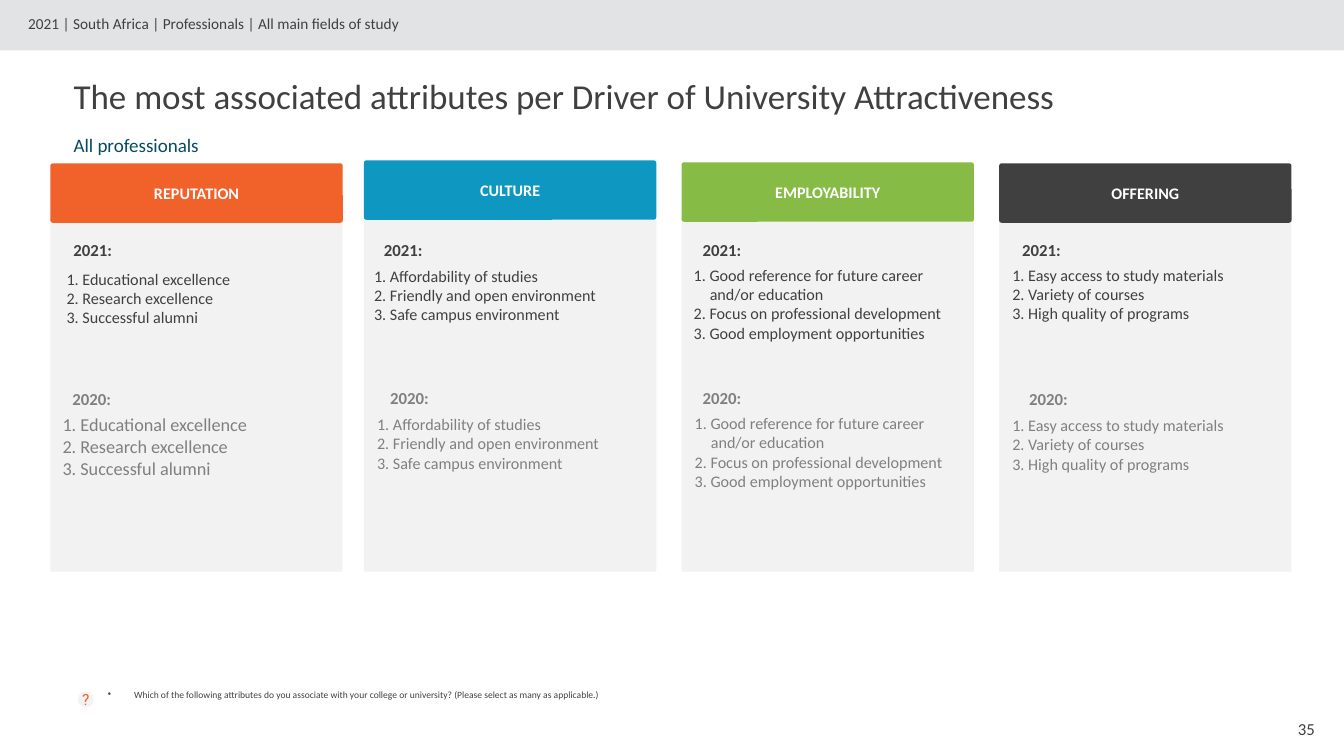
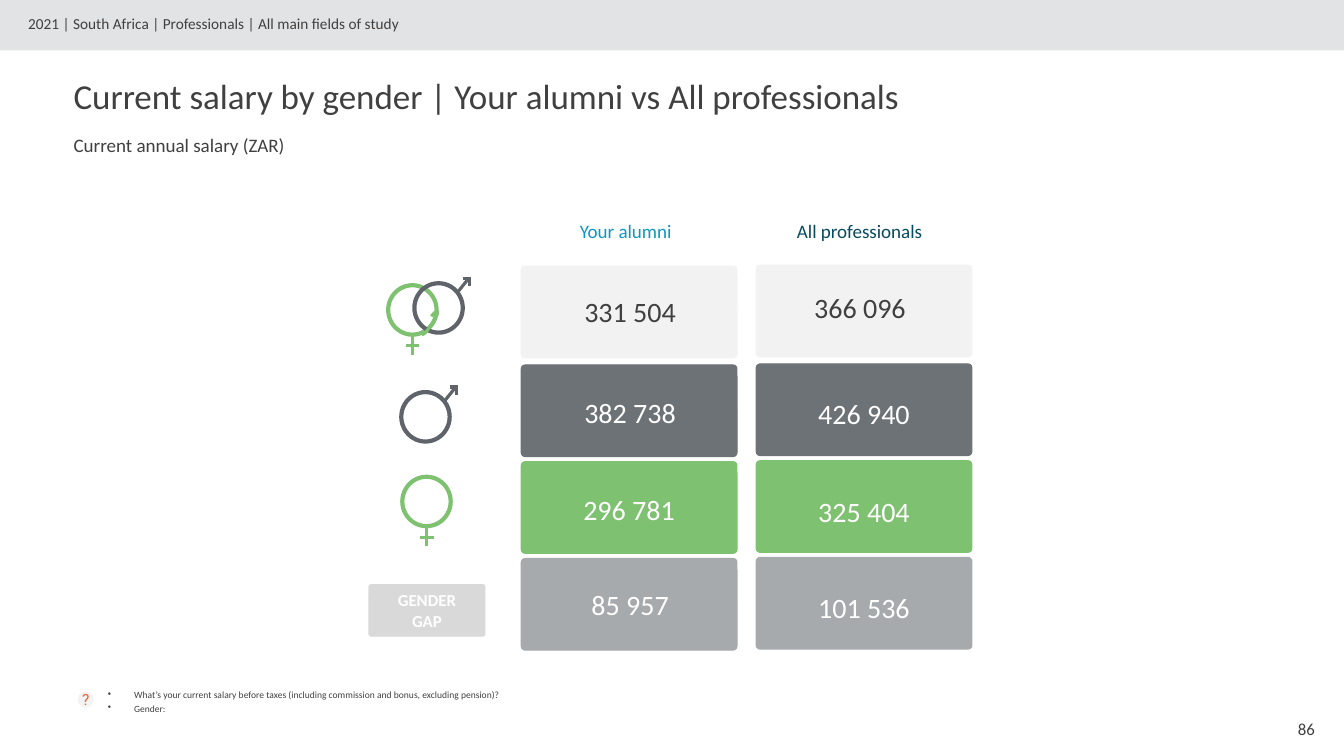
"""Build two survey slides: attributes per driver and salary by gender."""
from dataclasses import dataclass

from lxml import etree
from pptx import Presentation
from pptx.dml.color import RGBColor
from pptx.enum.shapes import MSO_CONNECTOR, MSO_SHAPE
from pptx.enum.text import MSO_ANCHOR, PP_ALIGN
from pptx.oxml.ns import qn
from pptx.util import Inches, Pt

STRAIGHT = MSO_CONNECTOR.STRAIGHT
RECTANGLE, ROUNDED = MSO_SHAPE.RECTANGLE, MSO_SHAPE.ROUNDED_RECTANGLE
CIRCLE, ARC = MSO_SHAPE.FLOWCHART_CONNECTOR, MSO_SHAPE.ARC
TOP, MIDDLE, BOTTOM = MSO_ANCHOR.TOP, MSO_ANCHOR.MIDDLE, MSO_ANCHOR.BOTTOM
LEFT, CENTER, RIGHT = PP_ALIGN.LEFT, PP_ALIGN.CENTER, PP_ALIGN.RIGHT

TITLE_ONLY = 5
FONT, ICON_FONT = "Calibri", "Roboto"
COLORS = {
    "white": "FFFFFF", "text": "414041", "muted": "808080", "band": "E2E3E4",
    "panel": "F2F2F2", "icon": "F3F3F3", "orange": "F1612A", "blue": "0E97C1",
    "lime": "86BC45", "teal": "074B60", "slate": "6D7276", "green": "7EC170",
    "gray": "A7AAAD", "label": "D9D9D9", "male": "5F636A",
}
BREADCRUMB = "2021 | South Africa | Professionals | All main fields of study"
BODY_INSETS = (0.11, 0.05)
CORNER = 0.043

MALE_LINES = [((0.48, -0.05), (0.56, -0.05)), ((0.55, -0.06), (0.55, 0.03)),
              ((0.54, -0.05), (0.42, 0.1))]
FEMALE_LINES = [((0.24, 0.49), (0.24, 0.69)), ((0.18, 0.6), (0.31, 0.6))]


@dataclass
class YearBlock:
    """Place and style of one year's ranking."""
    year: str
    color: str
    year_at: tuple
    list_at: tuple
    size: float = 11.5


@dataclass
class Driver:
    """One column of the driver slide."""
    name: str
    color: str
    left: float
    top: float
    attributes: list
    blocks: list


DRIVERS = [
    Driver("REPUTATION", "orange", 0.5, 1.62,
           ["Educational excellence", "Research excellence", "Successful alumni"],
           [YearBlock("2021:", "text", (0.63, 2.33), (0.66, 2.67)),
            YearBlock("2020:", "muted", (0.62, 3.81), (0.62, 4.1), 13)]),
    Driver("CULTURE", "blue", 3.61, 1.59,
           ["Affordability of studies", "Friendly and open environment",
            "Safe campus environment"],
           [YearBlock("2021:", "text", (3.71, 2.33), (3.71, 2.64)),
            YearBlock("2020:", "muted", (3.77, 3.8), (3.74, 4.11))]),
    Driver("EMPLOYABILITY", "lime", 6.76, 1.61,
           ["Good reference for future career and/or education",
            "Focus on professional development", "Good employment opportunities"],
           [YearBlock("2021:", "text", (6.87, 2.33), (6.88, 2.63)),
            YearBlock("2020:", "muted", (6.87, 3.8), (6.89, 4.1))]),
    Driver("OFFERING", "text", 9.91, 1.62,
           ["Easy access to study materials", "Variety of courses",
            "High quality of programs"],
           [YearBlock("2021:", "text", (10.04, 2.33), (10.04, 2.63)),
            YearBlock("2020:", "muted", (10.11, 3.81), (10.04, 4.12))]),
]

SALARY_ROWS = [("panel", "text"), ("slate", "white"), ("green", "white"), ("gray", "white")]
ROW_TOPS = [2.63, 3.61, 4.57, 5.53]
SALARY_COLUMNS = [
    ("Your alumni", "blue", 5.17, 0.01, 5.4,
     [("331 504", 5.23, 2.87), ("382 738", 5.23, 3.87),
      ("296 781", 5.22, 4.83), ("85 957", 5.23, 5.78)]),
    ("All professionals", "teal", 7.5, 0, 7.72,
     [("366 096", 7.46, 2.83), ("426 940", 7.5, 3.88),
      ("325 404", 7.5, 4.85), ("101 536", 7.5, 5.8)]),
]


def rgb(name):
    """Return the named colour."""
    return RGBColor.from_string(COLORS[name])


def write(shape, lines, size, color, align=LEFT, anchor=TOP, bold=False,
          font=FONT, insets=(0.1, 0.05), hanging=0, bullet=None, gap=0):
    """Fill a shape with equally styled paragraphs."""
    frame = shape.text_frame
    frame.word_wrap = True
    frame.vertical_anchor = anchor
    frame.margin_left = frame.margin_right = Inches(insets[0])
    frame.margin_top = frame.margin_bottom = Inches(insets[1])
    for index, line in enumerate(lines):
        para = frame.add_paragraph() if index else frame.paragraphs[0]
        para.text = line
        para.alignment = align
        if index and gap:
            para.space_before = Pt(gap)
        properties = para._p.get_or_add_pPr()
        if hanging:
            properties.set("marL", str(Inches(hanging)))
            properties.set("indent", str(-Inches(hanging)))
        if bullet:
            etree.SubElement(properties, qn("a:buChar")).set("char", bullet)
        para.font.name = font
        para.font.size = Pt(size)
        para.font.bold = bold
        para.font.color.rgb = rgb(color)


def add_text(slide, at, lines, size, color, **style):
    """Add a text box."""
    box = slide.shapes.add_textbox(*map(Inches, at))
    write(box, lines, size, color, **style)


def add_shape(slide, kind, at, fill=None, line=None, width=0.75):
    """Add a flat preset shape."""
    shape = slide.shapes.add_shape(kind, *map(Inches, at))
    shape.shadow.inherit = False
    if fill:
        shape.fill.solid()
        shape.fill.fore_color.rgb = rgb(fill)
    else:
        shape.fill.background()
    if line:
        shape.line.color.rgb = rgb(line)
        shape.line.width = Pt(width)
    else:
        shape.line.fill.background()
    if kind == ROUNDED:
        shape.adjustments[0] = CORNER
    return shape


def add_line(slide, start, end, color):
    """Add a straight stroke."""
    line = slide.shapes.add_connector(STRAIGHT, *map(Inches, start + end))
    line.line.color.rgb = rgb(color)
    line.line.width = Pt(2.25)
    etree.SubElement(line._element.spPr, qn("a:effectLst"))


def add_symbol(slide, left, top, color, strokes):
    """Add a gender symbol made of a ring and strokes."""
    add_shape(slide, CIRCLE, (left, top, 0.48, 0.49), line=color, width=3)
    for start, end in strokes:
        add_line(slide, (left + start[0], top + start[1]),
                 (left + end[0], top + end[1]), color)


def add_page(deck, title, subtitle, subtitle_color, questions, number):
    """Add a slide with the shared band, titles, question note and number."""
    slide = deck.slides.add_slide(deck.slide_layouts[TITLE_ONLY])
    add_shape(slide, RECTANGLE, (0, 0, 13.33, 0.5), "band")
    add_text(slide, (0.17, 0.09, 11.36, 0.31), [BREADCRUMB], 10.9, "text",
             insets=BODY_INSETS)
    heading = slide.shapes.title
    heading.left, heading.top, heading.width, heading.height = map(
        Inches, (0.62, 0.64, 12.55, 0.62))
    write(heading, [title], 25, "text", anchor=MIDDLE, insets=BODY_INSETS)
    add_text(slide, (0.62, 1.28, 12.54, 0.36), [subtitle], 13.6, subtitle_color,
             insets=BODY_INSETS)
    icon = add_shape(slide, CIRCLE, (0.77, 6.86, 0.16, 0.16), "icon")
    write(icon, ["?"], 11, "orange", CENTER, MIDDLE, font=ICON_FONT, insets=BODY_INSETS)
    add_text(slide, (0.96, 6.79, 5.51, 0.22), questions, 6.8, "text",
             insets=BODY_INSETS, hanging=0.26, bullet="•", gap=1.4)
    add_text(slide, (12.16, 7.03, 0.98, 0.4), [number], 12, "text",
             align=RIGHT, anchor=MIDDLE)
    return slide


def add_driver(slide, driver):
    """Add one driver column with its two rankings."""
    add_shape(slide, RECTANGLE, (driver.left, 2.18, 2.9, 3.49), "panel")
    header = add_shape(slide, ROUNDED, (driver.left, driver.top, 2.9, 0.59), driver.color)
    write(header, [driver.name], 11.5, "white", CENTER, MIDDLE, bold=True)
    ranking = [f"{rank}. {name}" for rank, name in enumerate(driver.attributes, 1)]
    for block in driver.blocks:
        add_text(slide, block.year_at + (2.5, 0.3), [block.year], 12, block.color, bold=True)
        add_text(slide, block.list_at + (2.59, 0.58), ranking, block.size, block.color,
                 insets=(0, 0), hanging=0.16)


def add_salaries(slide, name, color, left, shift, name_left, values):
    """Add one column of salary boxes under its heading."""
    add_text(slide, (name_left, 2.12, 1.61, 0.33), [name], 13.6, color,
             align=CENTER, anchor=BOTTOM)
    for (fill, ink), top, (value, value_left, value_top) in zip(SALARY_ROWS, ROW_TOPS, values):
        add_shape(slide, ROUNDED, (left, top + shift, 2.14, 0.91), fill, fill)
        width = 2.04 if left < 7 else 2.14
        add_text(slide, (value_left, value_top, width, 0.44), [value], 20, ink,
                 align=CENTER, anchor=MIDDLE)


def build_drivers(deck):
    """Build the slide of attributes per driver."""
    slide = add_page(
        deck, "The most associated attributes per Driver of University Attractiveness",
        "All professionals", "teal",
        ["Which of the following attributes do you associate with your college or "
         "university? (Please select as many as applicable.)"], "35")
    for driver in DRIVERS:
        add_driver(slide, driver)


def build_salaries(deck):
    """Build the slide of salaries by gender."""
    slide = add_page(
        deck, "Current salary by gender | Your alumni vs All professionals",
        "Current annual salary (ZAR)", "text",
        ["What’s your current salary before taxes (including commission and bonus, "
         "excluding pension)?", "Gender:"], "86")
    for column in SALARY_COLUMNS:
        add_salaries(slide, *column)
    gap_label = add_shape(slide, ROUNDED, (3.66, 5.8, 1.15, 0.51), "label", "label")
    write(gap_label, ["GENDER", "GAP"], 12, "white", CENTER, MIDDLE, bold=True)
    add_symbol(slide, 3.98, 3.89, "male", MALE_LINES)
    add_symbol(slide, 3.99, 4.73, "green", FEMALE_LINES)
    add_symbol(slide, 3.85, 2.83, "green", FEMALE_LINES)
    add_symbol(slide, 4.11, 2.81, "male", MALE_LINES)
    overlap = add_shape(slide, ARC, (4.12, 3.18, 0.28, 0.05), line="green", width=2.25)
    overlap.adjustments[0] = 96.98
    overlap.rotation = 123.6


def main():
    """Build and save the deck."""
    deck = Presentation()
    deck.slide_width, deck.slide_height = Inches(13.33), Inches(7.5)
    build_drivers(deck)
    build_salaries(deck)
    deck.save("out.pptx")


if __name__ == "__main__":
    main()
